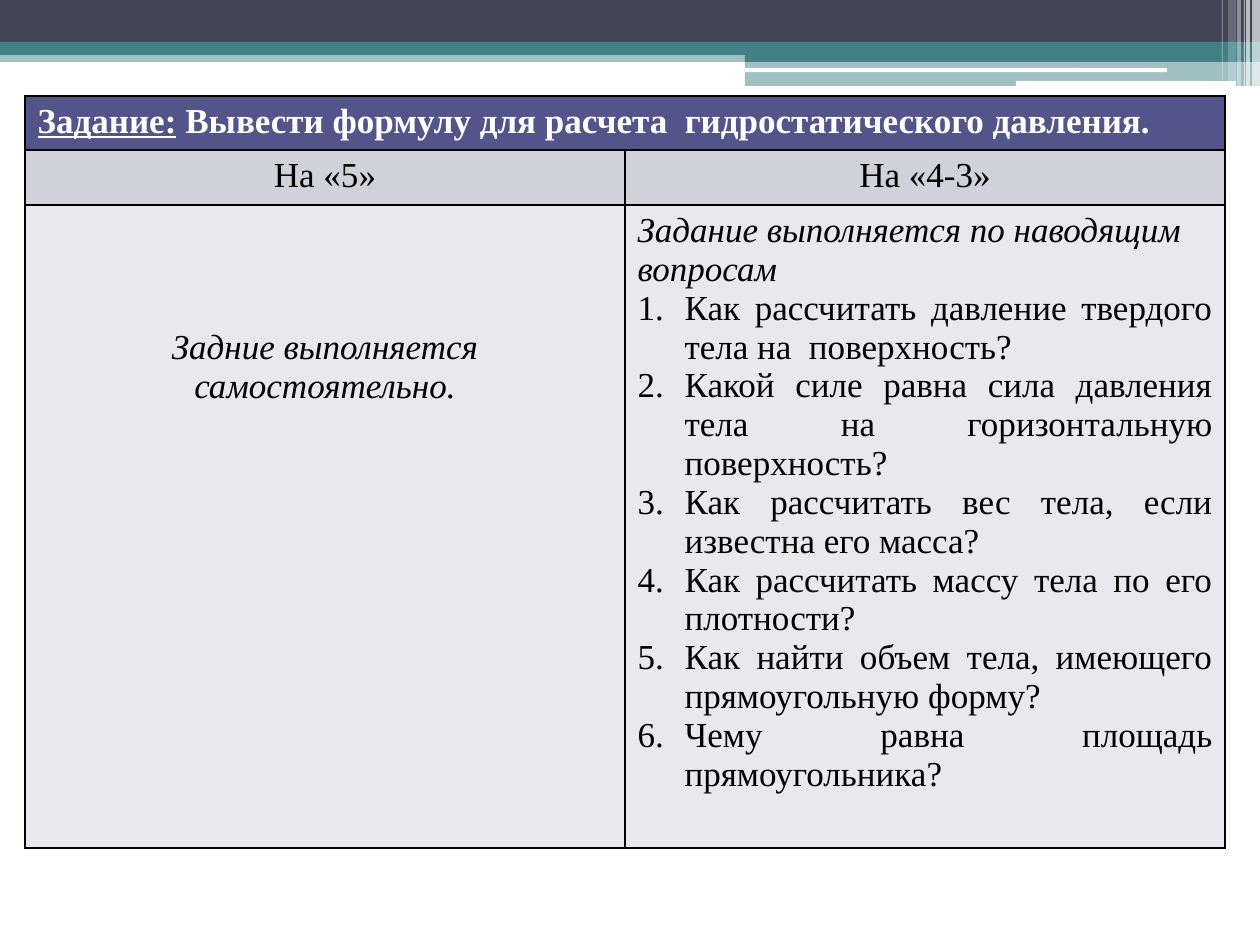
from pptx import Presentation
from pptx.dml.color import RGBColor
from pptx.enum.shapes import MSO_SHAPE
from pptx.enum.text import PP_ALIGN
from pptx.oxml.ns import qn
from pptx.util import Emu, Pt
from lxml import etree

RECT, ROUND = MSO_SHAPE.RECTANGLE, MSO_SHAPE.ROUNDED_RECTANGLE
LEFT, CENTER, JUSTIFY = PP_ALIGN.LEFT, PP_ALIGN.CENTER, PP_ALIGN.JUSTIFY

THEME = {
    "font": "Times New Roman", "size": 20, "border": 1,
    "dark": "424456", "teal": "438086", "white": "FFFFFF", "black": "000000",
    "head": "53548A", "subhead": "D1D1DA", "body": "E9E9ED",
}

BANDS = [
    (RECT, 0, 50, 1260, 12, "teal", 50),
    (RECT, 0, 0, 1260, 43, "dark", 100),
    (RECT, 0, 42, 1260, 13, "teal", 100),
    (RECT, 745, 49, 515, 13, "teal", 100),
    (RECT, 745, 61, 515, 25, "teal", 50),
    (ROUND, 745, 68, 422, 4, "white", 100),
    (ROUND, 1016, 81, 220, 5, "white", 100),
]
STRIPES = [
    (1252, 8, 86, 65), (1246, 4, 86, 65), (1244, 1, 86, 60),
    (1237, 4, 86, 40), (1228, 8, 81, 20), (1222, 1, 81, 30),
]

TASK = ("Задание:", " Вывести формулу для расчета  гидростатического давления.")
GRADES = ["На «5»", "На «4-3»"]
ALONE = "Задние выполняется самостоятельно."
GUIDED = "Задание выполняется по наводящим вопросам"
QUESTIONS = [
    "Как рассчитать давление твердого тела на  поверхность?",
    "Какой силе равна сила давления тела на горизонтальную поверхность?",
    "Как рассчитать вес тела, если известна его масса?",
    "Как рассчитать массу тела по его плотности?",
    "Как найти объем тела, имеющего прямоугольную форму?",
    "Чему равна площадь прямоугольника?",
]
TABLE_LEFT, TABLE_TOP = 25, 96
COLUMNS = [600, 600]
ROWS = [54, 55, 643]
ALONE_TOP = 123
INDENT = 47


def px(n):
    return Emu(round(n * 914400 / 126))


def color(name):
    return RGBColor.from_string(THEME[name])


def add_band(slide, kind, x, y, w, h, fill, opacity):
    sp = slide.shapes.add_shape(kind, px(x), px(y), px(w), px(h))
    sp.shadow.inherit = False
    sp.line.fill.background()
    sp.fill.solid()
    sp.fill.fore_color.rgb = color(fill)
    if opacity < 100:
        clr = sp._element.spPr.find(qn("a:solidFill"))[0]
        etree.SubElement(clr, qn("a:alpha"), val=str(opacity * 1000))


def add_text(p, text, fill="black", align=LEFT, bold=False, italic=False,
             underline=False, numbered=False):
    p.alignment = align
    r = p.add_run()
    r.text = text
    f = r.font
    f.name, f.size = THEME["font"], Pt(THEME["size"])
    f.bold, f.italic, f.underline = bold, italic, underline
    f.color.rgb = color(fill)
    if numbered:
        pPr = p._p.get_or_add_pPr()
        pPr.set("marL", str(px(INDENT)))
        pPr.set("indent", str(-px(INDENT)))
        etree.SubElement(pPr, qn("a:buAutoNum"), type="arabicPeriod")


def style_cell(cell, fill):
    cell.fill.solid()
    cell.fill.fore_color.rgb = color(fill)
    tcPr = cell._tc.get_or_add_tcPr()
    for i, side in enumerate("LRTB"):
        ln = etree.Element(qn(f"a:ln{side}"), w=str(Pt(THEME["border"])))
        paint = etree.SubElement(ln, qn("a:solidFill"))
        etree.SubElement(paint, qn("a:srgbClr"), val=THEME["black"])
        tcPr.insert(i, ln)


def add_task_table(slide):
    table = slide.shapes.add_table(
        len(ROWS), len(COLUMNS), px(TABLE_LEFT), px(TABLE_TOP),
        px(sum(COLUMNS)), px(sum(ROWS))).table
    for col, w in zip(table.columns, COLUMNS):
        col.width = px(w)
    for row, h, fill in zip(table.rows, ROWS, ("head", "subhead", "body")):
        row.height = px(h)
        for cell in row.cells:
            style_cell(cell, fill)

    table.cell(0, 0).merge(table.cell(0, 1))
    p = table.cell(0, 0).text_frame.paragraphs[0]
    for text, underline in zip(TASK, (True, False)):
        add_text(p, text, fill="white", bold=True, underline=underline)
    for i, grade in enumerate(GRADES):
        add_text(table.cell(1, i).text_frame.paragraphs[0], grade, align=CENTER)

    alone, guided = table.cell(2, 0), table.cell(2, 1)
    alone.margin_top = px(ALONE_TOP)
    add_text(alone.text_frame.paragraphs[0], ALONE, align=CENTER, italic=True)
    tf = guided.text_frame
    add_text(tf.paragraphs[0], GUIDED, italic=True)
    for question in QUESTIONS:
        add_text(tf.add_paragraph(), question, align=JUSTIFY, numbered=True)


def main():
    prs = Presentation()
    prs.slide_width, prs.slide_height = px(1260), px(945)
    slide = prs.slides.add_slide(prs.slide_layouts[6])
    for band in BANDS:
        add_band(slide, *band)
    for x, w, h, opacity in STRIPES:
        add_band(slide, RECT, x, 0, w, h, "white", opacity)
    add_task_table(slide)
    prs.save("out.pptx")


if __name__ == "__main__":
    main()
